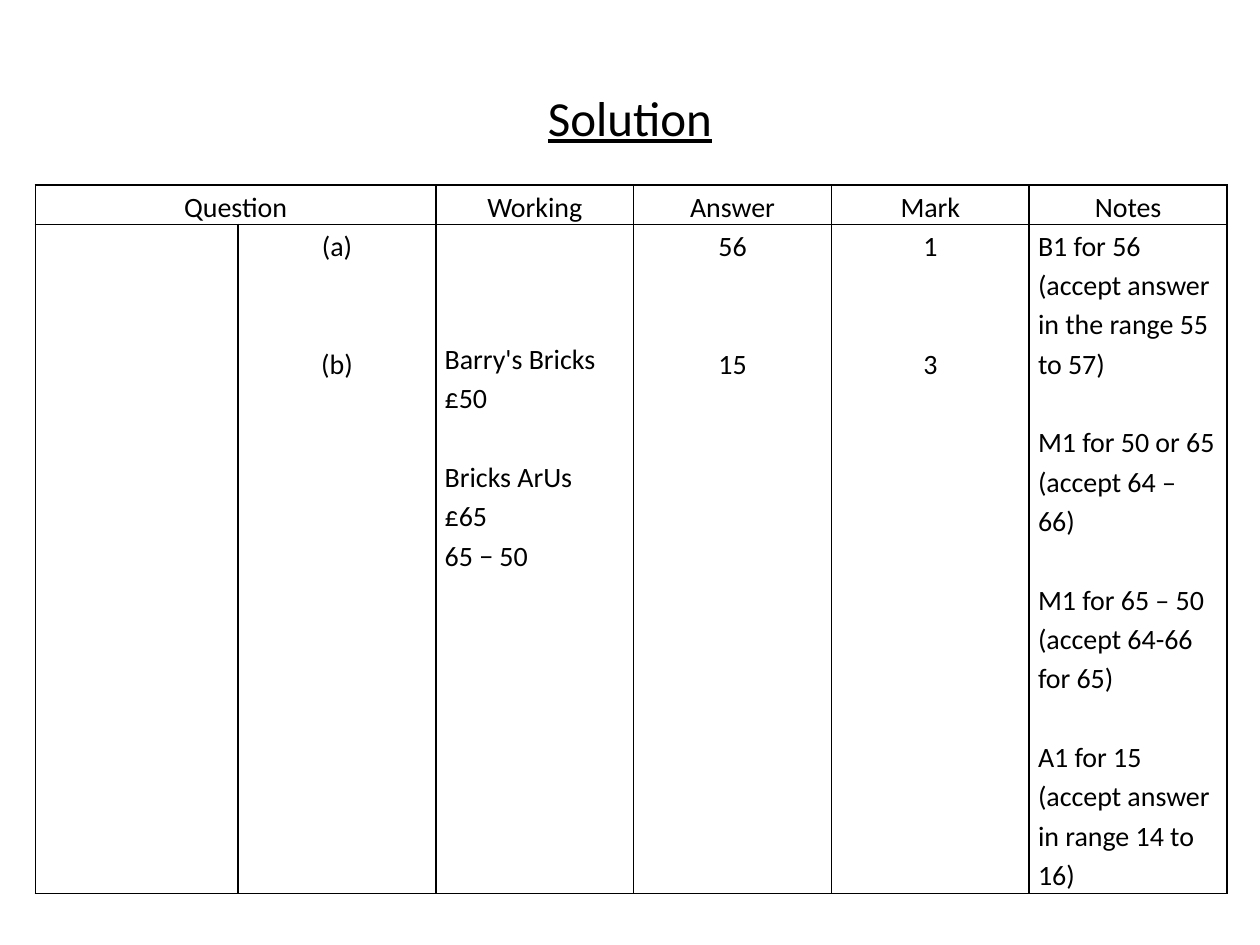
"""Build the mark scheme slide with its solution table."""
from pptx import Presentation
from pptx.dml.color import RGBColor
from pptx.enum.text import MSO_ANCHOR, PP_ALIGN
from pptx.oxml import parse_xml
from pptx.oxml.ns import nsdecls
from pptx.util import Inches, Pt

BLACK = RGBColor(0, 0, 0)
CENTER, LEFT = PP_ALIGN.CENTER, PP_ALIGN.LEFT
MIDDLE, TOP = MSO_ANCHOR.MIDDLE, MSO_ANCHOR.TOP
FONT = "Calibri"
LINE_GAP = 22.5

HEADERS = ["Question", None, "Working", "Answer", "Mark", "Notes"]
BODY = [
    (LEFT, 0, []),
    (CENTER, 0, [("(a)", 0), ("(b)", 2)]),
    (LEFT, 0.9, [("Barry's Bricks £50", 0), ("Bricks ArUs", 1), ("£65", 0), ("65 − 50", 0)]),
    (CENTER, 0, [("56", 0), ("15", 2)]),
    (CENTER, 0, [("1", 0), ("3", 2)]),
    (LEFT, 0, [
        ("B1 for 56 (accept answer in the range 55 to 57)", 0),
        ("M1 for 50 or 65 (accept 64 – 66)", 1),
        ("M1 for 65 – 50 (accept 64-66 for 65)", 1),
        ("A1 for 15 (accept answer in range 14 to 16)", 1),
    ]),
]


def style_font(paragraph, size):
    paragraph.font.name = FONT
    paragraph.font.size = Pt(size)
    paragraph.font.color.rgb = BLACK


def fill_cell(cell, lines, alignment, top=0):
    cell.margin_left = cell.margin_right = Inches(0.07)
    cell.margin_top = Inches(top)
    cell.margin_bottom = 0
    cell.vertical_anchor = TOP
    for index, (text, blank_lines) in enumerate(lines or [("", 0)]):
        paragraphs = cell.text_frame.paragraphs
        paragraph = cell.text_frame.add_paragraph() if index else paragraphs[0]
        paragraph.text = text
        paragraph.alignment = alignment
        paragraph.line_spacing = 1.15
        paragraph.space_before = Pt(blank_lines * LINE_GAP)
        style_font(paragraph, 16)
    properties = cell._tc.get_or_add_tcPr()
    for side in ("lnL", "lnR", "lnT", "lnB"):
        properties.append(parse_xml(
            f'<a:{side} {nsdecls("a")} w="{Pt(1)}"><a:solidFill>'
            f'<a:srgbClr val="{BLACK}"/></a:solidFill></a:{side}>'))
    cell.fill.background()


presentation = Presentation()
presentation.slide_width = Inches(10)
presentation.slide_height = Inches(7.5)
slide = presentation.slides.add_slide(presentation.slide_layouts[6])

title = slide.shapes.add_textbox(Inches(0.5), Inches(0.3), Inches(9), Inches(1.25))
title.text_frame.word_wrap = True
title.text_frame.vertical_anchor = MIDDLE
title_paragraph = title.text_frame.paragraphs[0]
title_paragraph.text = "Solution"
title_paragraph.alignment = CENTER
title_paragraph.font.underline = True
style_font(title_paragraph, 28)

table = slide.shapes.add_table(
    2, len(HEADERS), Inches(0.28), Inches(1.47), Inches(9.45), Inches(5.62)).table
table.first_row = False
table.horz_banding = False
for index, column in enumerate(table.columns):
    column.width = Inches(1.57 if index else 1.61)
table.rows[0].height = Inches(0.31)
table.rows[1].height = Inches(5.31)

for index, header in enumerate(HEADERS):
    fill_cell(table.cell(0, index), [(header or "", 0)], CENTER)
for index, (alignment, top, lines) in enumerate(BODY):
    fill_cell(table.cell(1, index), lines, alignment, top)
table.cell(0, 0).merge(table.cell(0, 1))
table.cell(0, 0).vertical_anchor = MIDDLE

presentation.save("out.pptx")
